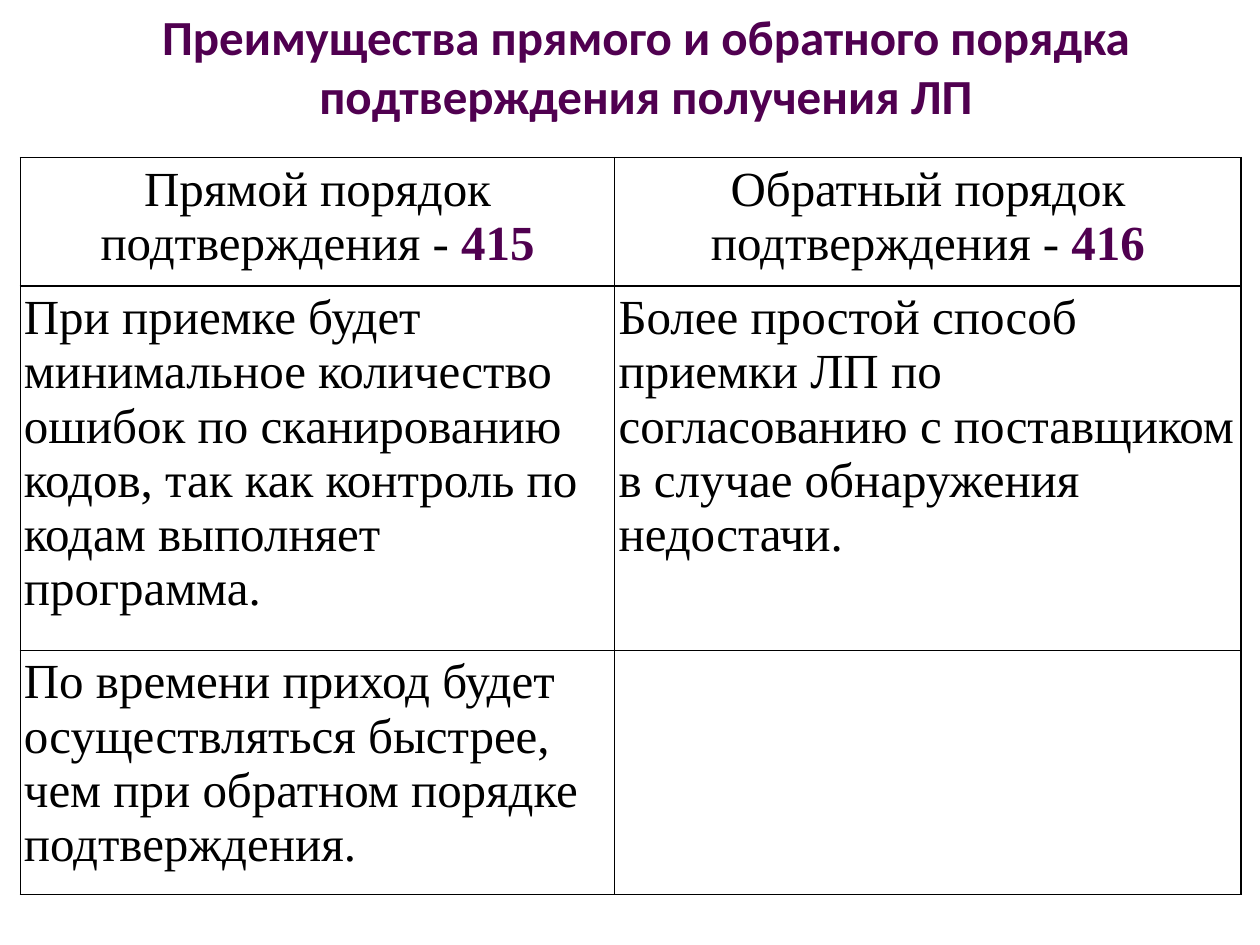
from dataclasses import dataclass

from lxml.etree import SubElement
from pptx import Presentation
from pptx.dml.color import RGBColor
from pptx.enum.text import MSO_ANCHOR, MSO_AUTO_SIZE, PP_ALIGN as Align
from pptx.oxml.ns import qn
from pptx.util import Inches, Pt

PLUM = RGBColor(0x50, 0x00, 0x50)
BLACK = RGBColor(0x00, 0x00, 0x00)
TITLE_FONT = {"name": "Calibri", "size": Pt(28), "bold": True}
BODY_FONT = {"name": "Times New Roman", "size": Pt(28), "bold": False}
CODE_FONT = {**BODY_FONT, "bold": True}
COLS = (4.72, 4.97)
ROWS = (1.02, 2.89, 1.94)
MARGINS = {
    "margin_left": Inches(0.03),
    "margin_right": Inches(0.03),
    "margin_top": Inches(0.04),
    "margin_bottom": Inches(0.04),
}


@dataclass(frozen=True)
class Entry:
    row: int
    col: int
    text: str
    code: str = ""
    align: Align = Align.LEFT


TITLE = "Преимущества прямого и обратного порядка подтверждения получения ЛП"
ENTRIES = (
    Entry(0, 0, "Прямой порядок подтверждения - ", "415", Align.CENTER),
    Entry(0, 1, "Обратный порядок подтверждения - ", "416", Align.CENTER),
    Entry(1, 0, "При приемке будет минимальное количество ошибок по сканированию "
                "кодов, так как контроль по кодам выполняет программа."),
    Entry(1, 1, "Более простой способ приемки ЛП по согласованию с поставщиком "
                "в случае обнаружения недостачи."),
    Entry(2, 0, "По времени приход будет осуществляться быстрее, "
                "чем при обратном порядке подтверждения."),
)


def set_attrs(obj, values: dict) -> None:
    for name, value in values.items():
        setattr(obj, name, value)


def add_run(p, text: str, font: dict, color: RGBColor) -> None:
    r = p.add_run()
    r.text = text
    set_attrs(r.font, font)
    r.font.color.rgb = color


def add_title(slide) -> None:
    sp = slide.shapes.title
    set_attrs(sp, {"left": Inches(1.17), "top": 0,
                   "width": Inches(7.91), "height": Inches(1.04)})
    tf = sp.text_frame
    set_attrs(tf, {"word_wrap": True, "auto_size": MSO_AUTO_SIZE.NONE,
                   "vertical_anchor": MSO_ANCHOR.MIDDLE})
    p = tf.paragraphs[0]
    p.alignment = Align.CENTER
    add_run(p, TITLE, TITLE_FONT, PLUM)


def format_cell(cell) -> None:
    set_attrs(cell, MARGINS)
    tc_pr = cell._tc.get_or_add_tcPr()
    for side in ("a:lnL", "a:lnR", "a:lnT", "a:lnB"):
        ln = SubElement(tc_pr, qn(side), w=str(Pt(0.75)))
        fill = SubElement(ln, qn("a:solidFill"))
        SubElement(fill, qn("a:srgbClr"), val=str(BLACK))
    cell.fill.background()


def fill_cell(cell, entry: Entry) -> None:
    p = cell.text_frame.paragraphs[0]
    p.alignment = entry.align
    add_run(p, entry.text, BODY_FONT, BLACK)
    if entry.code:
        add_run(p, entry.code, CODE_FONT, PLUM)


def add_comparison(slide) -> None:
    table = slide.shapes.add_table(
        len(ROWS), len(COLS), Inches(0.16), Inches(1.25),
        Inches(sum(COLS)), Inches(sum(ROWS))).table
    set_attrs(table, {"first_row": False, "horz_banding": False})
    for col, width in zip(table.columns, COLS):
        col.width = Inches(width)
    for row, height in zip(table.rows, ROWS):
        row.height = Inches(height)
    for cell in table.iter_cells():
        format_cell(cell)
    for entry in ENTRIES:
        fill_cell(table.cell(entry.row, entry.col), entry)


def main() -> None:
    """Build the slide comparing direct and reverse confirmation."""
    prs = Presentation()
    set_attrs(prs, {"slide_width": Inches(10), "slide_height": Inches(7.5)})
    slide = prs.slides.add_slide(prs.slide_layouts[5])
    add_title(slide)
    add_comparison(slide)
    prs.save("out.pptx")


if __name__ == "__main__":
    main()
